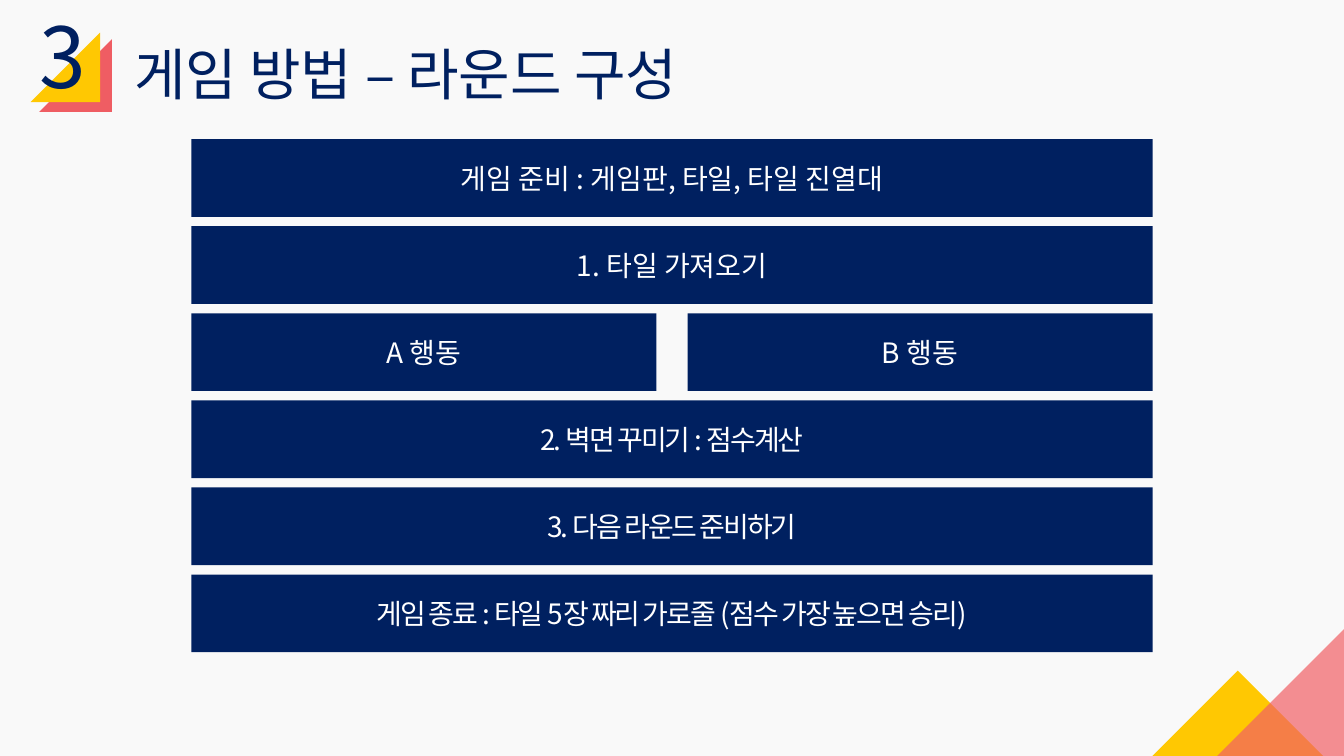
import pptx
import pptx.dml.color
import pptx.enum.shapes
import pptx.enum.text
import pptx.oxml
import pptx.oxml.ns
import pptx.util
from dataclasses import dataclass

Pt = pptx.util.Pt
SHAPES = pptx.enum.shapes.MSO_SHAPE
ALIGN = pptx.enum.text.PP_ALIGN
ANCHOR = pptx.enum.text.MSO_ANCHOR
qn = pptx.oxml.ns.qn


@dataclass(frozen=True)
class Theme:
    font: str = "Noto Sans CJK KR"
    background: str = "F9F9F9"
    navy: str = "002060"
    white: str = "FFFFFF"
    yellow: str = "FFC802"
    red: str = "EB1C24"
    coral: str = "F16065"
    number_size: int = 60
    title_size: int = 40
    step_size: int = 20


THEME = Theme()

# Round overview: left, top, width and height of the first bar, then the row pitch
BAR_LEFT, BAR_TOP, BAR_WIDTH, BAR_HEIGHT = 136.8, 99.4, 686.5, 55.5
ROW_PITCH = 62.2
COLUMN_GAP = 22.3

# Each row: letter spacing in points, then the labels side by side
ROWS = [
    (0, ["게임 준비 : 게임판, 타일, 타일 진열대"]),
    (0, ["1. 타일 가져오기"]),
    (0, ["A 행동", "B 행동"]),
    (-1.5, ["2. 벽면 꾸미기 : 점수계산"]),
    (-1.5, ["3. 다음 라운드 준비하기"]),
    (-1.5, ["게임 종료 : 타일 5장 짜리 가로줄 (점수 가장 높으면 승리)"]),
]

# Corner triangles: left, top, side, rotation, colour, opacity in percent
TRIANGLES = [
    (28, 28, 52, 270, THEME.red, 70),
    (21.9, 23.2, 49.7, 270, THEME.yellow, 100),
    (839.5, 497.5, 89.3, 135, THEME.yellow, 100),
    (867, 449.3, 93, 270, THEME.coral, 70),
]


def rgb(color):
    return pptx.dml.color.RGBColor.from_string(color)


def add_run(p, text, size, color, spacing=0):
    r = p.add_run()
    r.text = text
    r.font.size = Pt(size)
    r.font.name = THEME.font
    r.font.color.rgb = rgb(color)
    rPr = r.font._element
    pptx.oxml.ns  # East Asian face follows the Latin one
    ea = rPr.makeelement(qn("a:ea"), {"typeface": THEME.font})
    rPr.find(qn("a:latin")).addnext(ea)
    if spacing:
        rPr.set("spc", str(int(spacing * 100)))


def add_filled_shape(slide, kind, left, top, width, height, color):
    sp = slide.shapes.add_shape(kind, Pt(left), Pt(top), Pt(width), Pt(height))
    sp.shadow.inherit = False
    sp.fill.solid()
    sp.fill.fore_color.rgb = rgb(color)
    sp.line.fill.background()
    return sp


def add_triangle(slide, left, top, side, rotation, color, opacity):
    sp = add_filled_shape(slide, SHAPES.RIGHT_TRIANGLE, left, top, side, side, color)
    sp.rotation = rotation
    if opacity < 100:
        clr = sp._element.spPr.find(qn("a:solidFill")).find(qn("a:srgbClr"))
        clr.append(clr.makeelement(qn("a:alpha"), {"val": str(opacity * 1000)}))


def add_bar(slide, left, top, width, text, spacing):
    sp = add_filled_shape(slide, SHAPES.RECTANGLE, left, top, width, BAR_HEIGHT, THEME.navy)
    tf = sp.text_frame
    tf.word_wrap = True
    tf.vertical_anchor = ANCHOR.MIDDLE
    p = tf.paragraphs[0]
    p.alignment = ALIGN.CENTER
    add_run(p, text, THEME.step_size, THEME.white, spacing)


def add_row(slide, top, labels, spacing):
    count = len(labels)
    width = (BAR_WIDTH - COLUMN_GAP * (count - 1)) / count
    for i, label in enumerate(labels):
        add_bar(slide, BAR_LEFT + i * (width + COLUMN_GAP), top, width, label, spacing)


def fill_heading(sp, left, top, width, height, text, size):
    sp.left, sp.top, sp.width, sp.height = Pt(left), Pt(top), Pt(width), Pt(height)
    tf = sp.text_frame
    tf.word_wrap = True
    tf.auto_size = pptx.enum.text.MSO_AUTO_SIZE.SHAPE_TO_FIT_TEXT
    tf.vertical_anchor = ANCHOR.TOP
    p = tf.paragraphs[0]
    p.alignment = ALIGN.LEFT
    add_run(p, text, size, THEME.navy)


def main():
    prs = pptx.Presentation()
    prs.slide_width, prs.slide_height = Pt(960), Pt(540)
    slide = prs.slides.add_slide(prs.slide_layouts[5])
    slide.background.fill.solid()
    slide.background.fill.fore_color.rgb = rgb(THEME.background)

    # Corner decoration
    for triangle in TRIANGLES:
        add_triangle(slide, *triangle)

    # Section number and title
    number = slide.shapes.add_textbox(0, 0, 0, 0)
    fill_heading(number, 20.9, 0, 67.7, 80, "3", THEME.number_size)
    fill_heading(slide.shapes.title, 88.6, 24.5, 423.4, 55.4,
                 "게임 방법 – 라운드 구성", THEME.title_size)

    # Round overview
    for i, (spacing, labels) in enumerate(ROWS):
        add_row(slide, BAR_TOP + i * ROW_PITCH, labels, spacing)

    prs.save("out.pptx")


if __name__ == "__main__":
    main()
